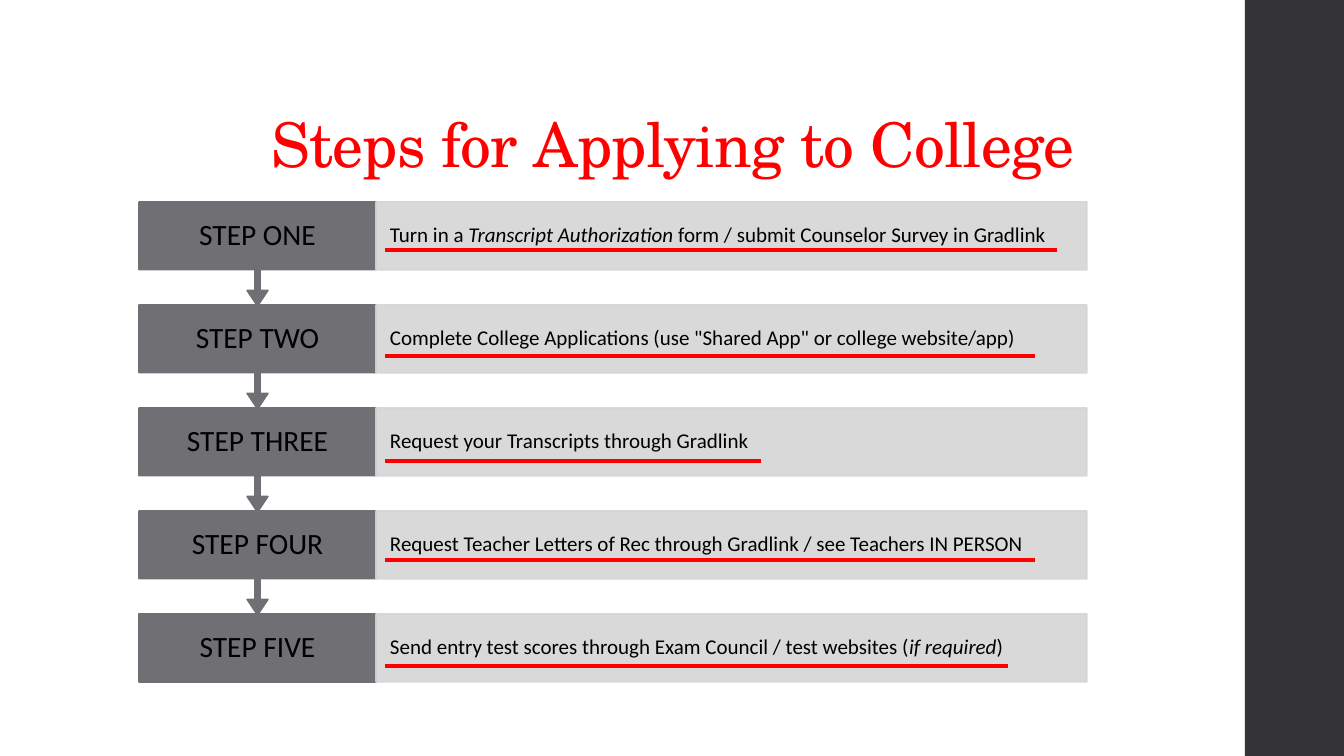
from lxml import etree
from pptx import Presentation
from pptx import util as u
from pptx.dml.color import RGBColor
from pptx.enum import shapes, text
from pptx.oxml.ns import qn

RED = RGBColor(0xFF, 0x00, 0x00)
BLACK = RGBColor(0x00, 0x00, 0x00)
GRAY = RGBColor(0x6F, 0x6F, 0x74)
PALE = RGBColor(0xD5, 0xD5, 0xD6)
DARK = RGBColor(0x35, 0x35, 0x37)

WIDTH, HEIGHT = 1344, 756
SCALE = 12192000 / WIDTH

LEFT, TOP, PITCH = 139, 202, 103
LABEL_W, DETAIL_W, ROW_H, CALLOUT_H = 237, 711, 68, 104
RULE_LEFT = 385

STEPS = [
    ("STEP ONE", [("Turn in a ", False), ("Transcript Authorization ", True),
                  ("form / submit Counselor Survey in Gradlink", False)], 1057, 250),
    ("STEP TWO", [('Complete College Applications (use "Shared App" or college website/app)', False)],
     1035, 356),
    ("STEP THREE", [("Request your Transcripts through Gradlink", False)], 761, 461),
    ("STEP FOUR", [("Request Teacher Letters of Rec through Gradlink / see Teachers IN PERSON", False)],
     1035, 560),
    ("STEP FIVE", [("Send entry test scores through Exam Council / test websites (", False),
                   ("if required", True), (")", False)], 1008, 666),
]


def px(n):
    return u.Emu(round(n * SCALE))


class Deck:
    font = "Calibri"
    title_font = "TeX Gyre Schola"

    def __init__(self):
        self.prs = Presentation()
        self.prs.slide_width, self.prs.slide_height = px(WIDTH), px(HEIGHT)
        self.s = self.prs.slides.add_slide(self.prs.slide_layouts[5])

    def add_text(self, sp, runs, font, size, color, align, anchor, insets):
        tf = sp.text_frame
        tf.word_wrap = True
        tf.vertical_anchor = anchor
        tf.margin_left = tf.margin_right = px(insets[0])
        tf.margin_top = tf.margin_bottom = px(insets[1])
        p = tf.paragraphs[0]
        p.alignment = align
        p.line_spacing = 0.9
        for words, italic in runs:
            r = p.add_run()
            r.text = words
            r.font.name = font
            r.font.size = u.Pt(size)
            r.font.italic = italic
            r.font.color.rgb = color
        return p

    def title(self, words, x, y, w, h):
        sp = self.s.shapes.title
        sp.left, sp.top, sp.width, sp.height = map(px, (x, y, w, h))
        p = self.add_text(sp, [(words, False)], self.title_font, 44, RED,
                          text.PP_ALIGN.CENTER, text.MSO_ANCHOR.BOTTOM, (10, 5))
        sp.text_frame.auto_size = text.MSO_AUTO_SIZE.NONE
        p.runs[0].font._element.set("spc", "-50")

    def shape(self, kind, x, y, w, h, color, outlined=True, alpha=None):
        sp = self.s.shapes.add_shape(kind, *map(px, (x, y, w, h)))
        sp.shadow.inherit = False
        sp.fill.solid()
        sp.fill.fore_color.rgb = color
        if outlined:
            sp.line.color.rgb = color
            sp.line.width = u.Pt(1.1)
        else:
            sp.line.fill.background()
        if alpha:
            for clr in sp._element.spPr.iter(qn("a:srgbClr")):
                etree.SubElement(clr, qn("a:alpha"), val=str(alpha * 1000))
        return sp

    def callout(self, x, y, w, h):
        sp = self.shape(shapes.MSO_SHAPE.UP_ARROW_CALLOUT, x, y, w, h, GRAY)
        sp.rotation = 180
        for i, value in enumerate((0.05, 0.1, 0.15, 0.65)):
            sp.adjustments[i] = value

    def label(self, words, x, y, w, h):
        sp = self.s.shapes.add_textbox(*map(px, (x, y, w, h)))
        self.add_text(sp, [(words, False)], self.font, 21, BLACK,
                      text.PP_ALIGN.CENTER, text.MSO_ANCHOR.MIDDLE, (17, 16))

    def detail(self, runs, x, y, w, h):
        sp = self.shape(shapes.MSO_SHAPE.RECTANGLE, x, y, w, h, PALE, alpha=90)
        self.add_text(sp, runs, self.font, 15, BLACK,
                      text.PP_ALIGN.LEFT, text.MSO_ANCHOR.MIDDLE, (14, 21))

    def rule(self, x1, x2, y):
        c = self.s.shapes.add_connector(shapes.MSO_CONNECTOR.STRAIGHT, *map(px, (x1, y, x2, y)))
        c.line.color.rgb = RED
        c.line.width = u.Pt(2.75)
        etree.SubElement(c._element.spPr, qn("a:effectLst"))


def main():
    d = Deck()
    d.shape(shapes.MSO_SHAPE.RECTANGLE, 1245, 0, 99, HEIGHT, DARK, outlined=False)
    d.title("Steps for Applying to College", 139, 40, 1068, 146)
    for i, (name, runs, _, _) in reversed(list(enumerate(STEPS))):
        y = TOP + i * PITCH
        if i == len(STEPS) - 1:
            d.shape(shapes.MSO_SHAPE.RECTANGLE, LEFT, y, LABEL_W, ROW_H, GRAY)
        else:
            d.callout(LEFT, y, LABEL_W, CALLOUT_H)
        d.label(name, LEFT, y, LABEL_W, ROW_H)
        d.detail(runs, LEFT + LABEL_W, y, DETAIL_W, ROW_H)
    for _, _, end, y in STEPS:
        d.rule(RULE_LEFT, end, y)
    d.prs.save("out.pptx")


if __name__ == "__main__":
    main()
